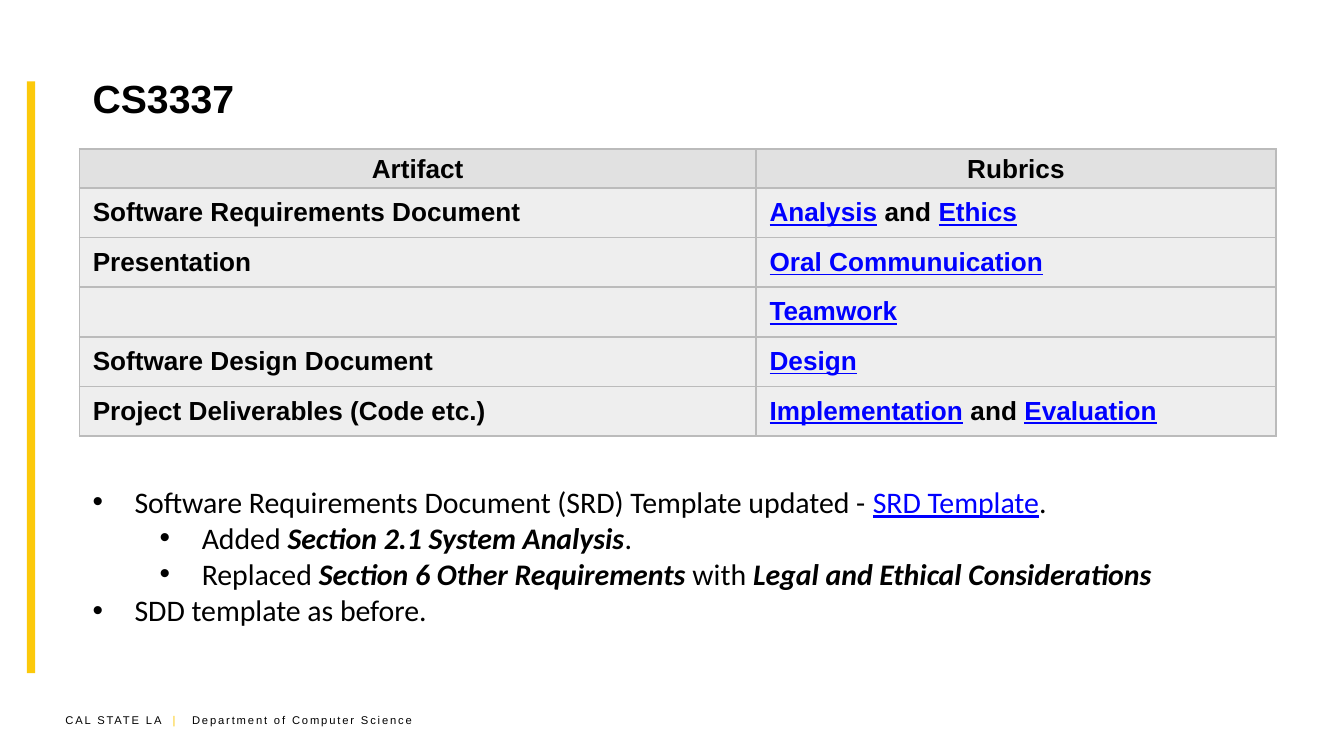
import dataclasses
import lxml.etree
import pptx
import pptx.dml.color
import pptx.enum.shapes
import pptx.enum.text
import pptx.oxml.ns
import pptx.util

Pt = pptx.util.Pt
qn = pptx.oxml.ns.qn
Align = pptx.enum.text.PP_ALIGN
Anchor = pptx.enum.text.MSO_ANCHOR


@dataclasses.dataclass(frozen=True)
class Theme:
    ink: str = "000000"
    gold: str = "FCC90A"
    link: str = "0000FF"
    head: str = "E1E1E1"
    cell: str = "EEEEEE"
    rule: str = "BBBBBB"
    sans: str = "Arial"
    body: str = "Calibri"
    title: float = 21
    table: float = 14
    list: float = 16
    foot: float = 6


theme = Theme()
LINK = {"color": theme.link, "under": True}
STRONG = {"bold": True, "italic": True}


def rgb(code):
    return pptx.dml.color.RGBColor.from_string(code)


def child(parent, tag, **attrs):
    return lxml.etree.SubElement(parent, qn(tag), attrs)


def style(run, font=theme.sans, size=theme.list, color=theme.ink,
          bold=False, italic=False, under=False, track=0):
    face = run.font
    face.name, face.size = font, Pt(size)
    face.bold, face.italic, face.underline = bold, italic, under
    face.color.rgb = rgb(color)
    if track:
        run._r.get_or_add_rPr().set("spc", str(track * 100))


def write(para, text, align=Align.LEFT, line=None, before=0, after=0,
          hang=None, tab=None, level=0, **look):
    para.alignment, para.level = align, level
    para.space_before, para.space_after = Pt(before), Pt(after)
    if line:
        para.line_spacing = line
    props = para._p.get_or_add_pPr()
    if hang:
        left, back = hang
        props.set("marL", str(Pt(left)))
        props.set("indent", str(-Pt(back)))
        child(props, "a:buFont", typeface=theme.sans)
        child(props, "a:buChar", char="•")
    if tab:
        stops = child(props, "a:tabLst")
        child(stops, "a:tab", pos=str(Pt(tab)), algn="l")
    parts = [(text, {})] if isinstance(text, str) else text
    for words, extra in parts:
        if words:
            run = para.add_run()
            run.text = words
            style(run, **{**look, **extra})
        else:
            child(para._p, "a:endParaRPr", sz=str(look["size"] * 100))


def frame(slide, box, anchor=Anchor.TOP):
    body = slide.shapes.add_textbox(*map(Pt, box)).text_frame
    body.word_wrap = True
    body.vertical_anchor = anchor
    return body


def stripe(slide, box):
    bar = slide.shapes.add_shape(
        pptx.enum.shapes.MSO_SHAPE.RECTANGLE, *map(Pt, box))
    bar.shadow.inherit = False
    bar.fill.solid()
    bar.fill.fore_color.rgb = rgb(theme.gold)
    bar.line.fill.background()


def title(slide, box):
    body = frame(slide, box, Anchor.MIDDLE)
    write(body.paragraphs[0], "CS3337", size=theme.title, bold=True)


def border(cell):
    props = cell._tc.get_or_add_tcPr()
    for spot, side in enumerate("LRTB"):
        line = child(props, f"a:ln{side}", w=str(Pt(1)))
        child(child(line, "a:solidFill"), "a:srgbClr", val=theme.rule)
        props.insert(spot, line)


def grid(slide, box):
    left, top, width, height = box
    rows = [
        ("Artifact", "Rubrics"),
        ("Software Requirements Document",
         [("Analysis", LINK), (" and ", {}), ("Ethics", LINK)]),
        ("Presentation", [("Oral Communuication", LINK)]),
        ("", [("Teamwork", LINK)]),
        ("Software Design Document", [("Design", LINK)]),
        ("Project Deliverables (Code etc.)",
         [("Implementation", LINK), (" and ", {}), ("Evaluation", LINK)]),
    ]
    table = slide.shapes.add_table(len(rows), 2, *map(Pt, box)).table
    first = 362.6
    table.columns[0].width = Pt(first)
    table.columns[1].width = Pt(width - first)
    header = 20.4
    each = (height - header) / (len(rows) - 1)
    for r, row in enumerate(rows):
        top_row = r == 0
        table.rows[r].height = Pt(header if top_row else each)
        side, edge = (3, 1.5) if top_row else (7.2, 4.3)
        for c, text in enumerate(row):
            cell = table.cell(r, c)
            cell.fill.solid()
            cell.fill.fore_color.rgb = rgb(theme.head if top_row else theme.cell)
            cell.margin_left = cell.margin_right = Pt(side)
            cell.margin_top = cell.margin_bottom = Pt(edge)
            cell.vertical_anchor = Anchor.MIDDLE if top_row else Anchor.TOP
            border(cell)
            write(cell.text_frame.paragraphs[0], text, size=theme.table,
                  bold=True, line=1.07, after=12,
                  align=Align.CENTER if top_row else Align.LEFT)


def notes(slide, box):
    main = {"align": Align.JUSTIFY, "hang": (22.5, 22.5)}
    sub = {"level": 1, "hang": (58.5, 22.5), "tab": 27}
    items = [
        ([("Software Requirements Document (SRD) Template updated - ", {}),
          ("SRD Template", LINK), (".", {})], main),
        ([("Added ", {}), ("Section 2.1 System Analysis", STRONG),
          (".", {})], sub),
        ([("Replaced ", {}), ("Section 6 Other Requirements", STRONG),
          (" with ", {}), ("Legal and Ethical Considerations", STRONG)], sub),
        ("SDD template as before.",
         {**main, "line": Pt(11.2), "before": 8.4, "after": 8.4}),
    ]
    body = frame(slide, box)
    for spot, (text, form) in enumerate(items):
        para = body.add_paragraph() if spot else body.paragraphs[0]
        write(para, text, font=theme.body, size=theme.list, **form)


def footer(slide, box):
    write(frame(slide, box).paragraphs[0],
          [("CAL STATE LA ", {}), (" |", {"color": theme.gold}),
           ("\tDepartment of Computer Science", {})],
          size=theme.foot, track=1, tab=67.8)


def main():
    deck = pptx.Presentation()
    deck.slide_width, deck.slide_height = Pt(720), Pt(405)
    slide = deck.slides.add_slide(deck.slide_layouts[6])
    left, width = 42.5, 641
    footer(slide, (28, 378.7, 210, 14.4))
    stripe(slide, (14.4, 43.6, 4.4, 317))
    title(slide, (left, 18.7, width, 67.7))
    grid(slide, (left, 79.8, width, 146))
    notes(slide, (left, 255.6, width, 85))
    deck.save("out.pptx")


if __name__ == "__main__":
    main()
